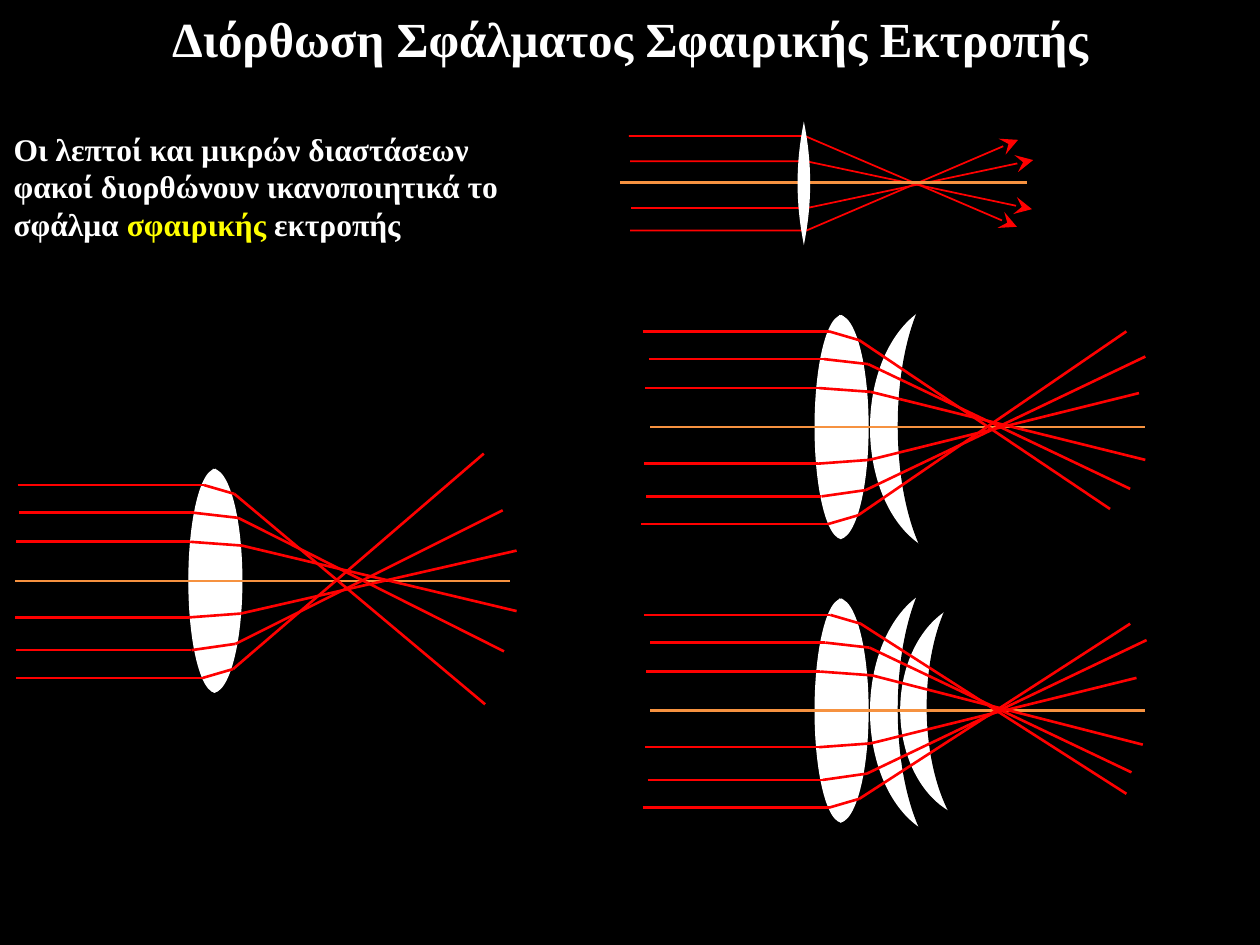
from lxml import etree
from pptx import Presentation
from pptx.dml.color import RGBColor
from pptx.enum.shapes import MSO_CONNECTOR, MSO_SHAPE
from pptx.enum.text import MSO_ANCHOR, MSO_AUTO_SIZE, PP_ALIGN
from pptx.oxml.ns import qn
from pptx.util import Inches, Pt

BLACK = RGBColor(0x00, 0x00, 0x00)
WHITE = RGBColor(0xFF, 0xFF, 0xFF)
YELLOW = RGBColor(0xFF, 0xFF, 0x00)
RED = RGBColor(0xFF, 0x00, 0x00)
ORANGE = RGBColor(0xF6, 0x92, 0x40)
FONT = "Times New Roman"

# The slide is a square grid of 10 columns by 7.5 rows.
COLUMNS, ROWS = 10, 7.5
CELL = Inches(1)

# Start x, entry point and exit point of each ray, measured from the left
# of the biconvex lens and from the optical axis; outer pair first.
RAY_PAIRS = [
    [(-1.33, (0.15, -0.76), (0.39, -0.69)), (-1.34, (0.14, 0.77), (0.38, 0.70))],
    [(-1.28, (0.11, -0.54), (0.46, -0.50)), (-1.30, (0.09, 0.55), (0.44, 0.50))],
    [(-1.31, (0.07, -0.31), (0.48, -0.28)), (-1.32, (0.06, 0.29), (0.47, 0.26))],
]
SINGLET_ENDS = [[(2.39, 0.98), (2.38, -1.01)],
                [(2.54, 0.56), (2.53, -0.56)],
                [(2.64, 0.24), (2.64, -0.24)]]
DOUBLET_ENDS = [[(2.38, 0.65), (2.51, -0.76)],
                [(2.54, 0.49), (2.66, -0.56)],
                [(2.66, 0.26), (2.61, -0.27)]]
TRIPLET_ENDS = [[(2.51, 0.66), (2.54, -0.69)],
                [(2.55, 0.49), (2.67, -0.56)],
                [(2.64, 0.27), (2.59, -0.26)]]

# Outer and inner arc of each meniscus: offset from lens and axis, then size.
FIRST_MENISCUS = [(0.48, -1.00, 1.32, 2.01), (0.70, -1.29, 1.05, 2.56)]
SECOND_MENISCUS = [(0.72, -0.87, 1.26, 1.73), (0.93, -1.17, 1.10, 2.28)]


def grid(*lengths):
    return [round(length * CELL) for length in lengths]


def add_line(slide, start, end, color, width=1.5):
    line = slide.shapes.add_connector(MSO_CONNECTOR.STRAIGHT, *grid(*start, *end))
    line.line.color.rgb = color
    line.line.width = Pt(width)
    etree.SubElement(line._element.spPr, qn("a:effectLst"))


def add_half_ellipse(slide, box, color, left_half=True):
    arc = slide.shapes.add_shape(MSO_SHAPE.ARC, *grid(*box))
    arc.adjustments[0] = 162
    arc.adjustments[1] = 53.741
    if left_half:
        arc._element.spPr.find(qn("a:xfrm")).set("flipH", "1")
    arc.fill.solid()
    arc.fill.fore_color.rgb = color
    arc.line.color.rgb = color
    arc.line.width = Pt(0.75)
    arc.shadow.inherit = False


def add_outline(slide, points, closed):
    start, *others = [grid(*point) for point in points]
    builder = slide.shapes.build_freeform(*start, scale=1.0)
    builder.add_line_segments(others, close=closed)
    outline = builder.convert_to_shape()
    outline.shadow.inherit = False
    return outline


def add_run(paragraph, text, size, color):
    run = paragraph.add_run()
    run.text = text
    run.font.name = FONT
    run.font.size = Pt(size)
    run.font.bold = True
    run.font.color.rgb = color


def add_title(slide, box):
    title = slide.shapes.title
    title.left, title.top, title.width, title.height = grid(*box)
    frame = title.text_frame
    frame.auto_size = MSO_AUTO_SIZE.NONE
    frame.vertical_anchor = MSO_ANCHOR.TOP
    paragraph = frame.paragraphs[0]
    paragraph.alignment = PP_ALIGN.CENTER
    add_run(paragraph, "Διόρθωση Σφάλματος Σφαιρικής Εκτροπής", 28, WHITE)


def add_statement(slide, box):
    frame = slide.shapes.add_textbox(*grid(*box)).text_frame
    frame.word_wrap = True
    paragraph = frame.paragraphs[0]
    add_run(paragraph, "Οι λεπτοί και μικρών διαστάσεων φακοί διορθώνουν "
                       "ικανοποιητικά το σφάλμα ", 18, WHITE)
    add_run(paragraph, "σφαιρικής", 18, YELLOW)
    add_run(paragraph, " εκτροπής", 18, WHITE)


def add_thin_lens_system(slide, left, axis):
    """Thin lens whose four arrowed rays meet at one focus."""
    lens = left + 1.46
    for start, entry, end, arrival in [(0.07, -0.37, 3.15, 0.35), (0.08, 0.38, 3.16, -0.34),
                                       (0.08, -0.17, 3.27, 0.21), (0.09, 0.20, 3.28, -0.18)]:
        ray = add_outline(slide, [(left + start, axis + entry),
                                  (left + start + 1.40, axis + entry),
                                  (left + end, axis + arrival)], closed=False)
        ray.fill.background()
        ray.line.color.rgb = RED
        ray.line.width = Pt(1)
        etree.SubElement(ray.line._get_or_add_ln(), qn("a:tailEnd"),
                         type="stealth", w="lg", len="lg")
    add_line(slide, (left, axis), (left + 3.23, axis), ORANGE)
    steps = 16
    for side in (-1, 1):
        half = [(lens + side * 0.15 * t * (1 - t) * 1.33, axis - 0.485 + 0.98 * t)
                for t in (step / steps for step in range(steps + 1))]
        shape = add_outline(slide, half, closed=True)
        shape.fill.solid()
        shape.fill.fore_color.rgb = WHITE
        shape.line.fill.background()


def add_thick_lens_system(slide, lens, axis, axis_start, ray_ends, menisci=(), shifts=(0, 0, 0)):
    """Biconvex lens, optional menisci and three pairs of rays.

    Each shift moves the start and bends of one pair along the axis.
    """
    def add_meniscus(arcs):
        for (x, y, width, height), color in zip(arcs, (WHITE, BLACK)):
            add_half_ellipse(slide, (lens + x, axis + y, width, height), color)

    for arcs in menisci[:1]:
        add_meniscus(arcs)
    top, height = axis - 0.885, 1.77
    add_half_ellipse(slide, (lens, top, 0.46, height), WHITE, left_half=False)
    add_half_ellipse(slide, (lens + 0.04, top, 0.43, height), WHITE)
    for arcs in menisci[1:]:
        add_meniscus(arcs)
    add_line(slide, (axis_start, axis), (axis_start + 3.93, axis), ORANGE)

    for pair, ends, shift in zip(RAY_PAIRS, ray_ends, shifts):
        for (start, entry, leaving), end in zip(pair, ends):
            bends = [(lens + x + shift, axis + y) for x, y in
                     ((start, entry[1]), entry, leaving)]
            points = bends + [(lens + end[0], axis + end[1])]
            for first, second in zip(points, points[1:]):
                add_line(slide, first, second, RED)


def main():
    presentation = Presentation()
    presentation.slide_width, presentation.slide_height = grid(COLUMNS, ROWS)
    slide = presentation.slides.add_slide(presentation.slide_layouts[5])
    slide.background.fill.solid()
    slide.background.fill.fore_color.rgb = BLACK

    add_title(slide, (0, 0.02, COLUMNS, 0.53))
    add_statement(slide, (0.01, 0.98, 4.05, 0.94))
    add_thin_lens_system(slide, 4.92, 1.45)
    add_thick_lens_system(slide, 1.46, 4.61, 0.12, SINGLET_ENDS,
                          shifts=(0.01, -0.03, -0.02))
    add_thick_lens_system(slide, 6.43, 3.39, 5.16, DOUBLET_ENDS, [FIRST_MENISCUS])
    add_thick_lens_system(slide, 6.43, 5.64, 5.16, TRIPLET_ENDS,
                          [FIRST_MENISCUS, SECOND_MENISCUS], shifts=(0.01, 0.01, 0.01))
    presentation.save("out.pptx")


if __name__ == "__main__":
    main()
